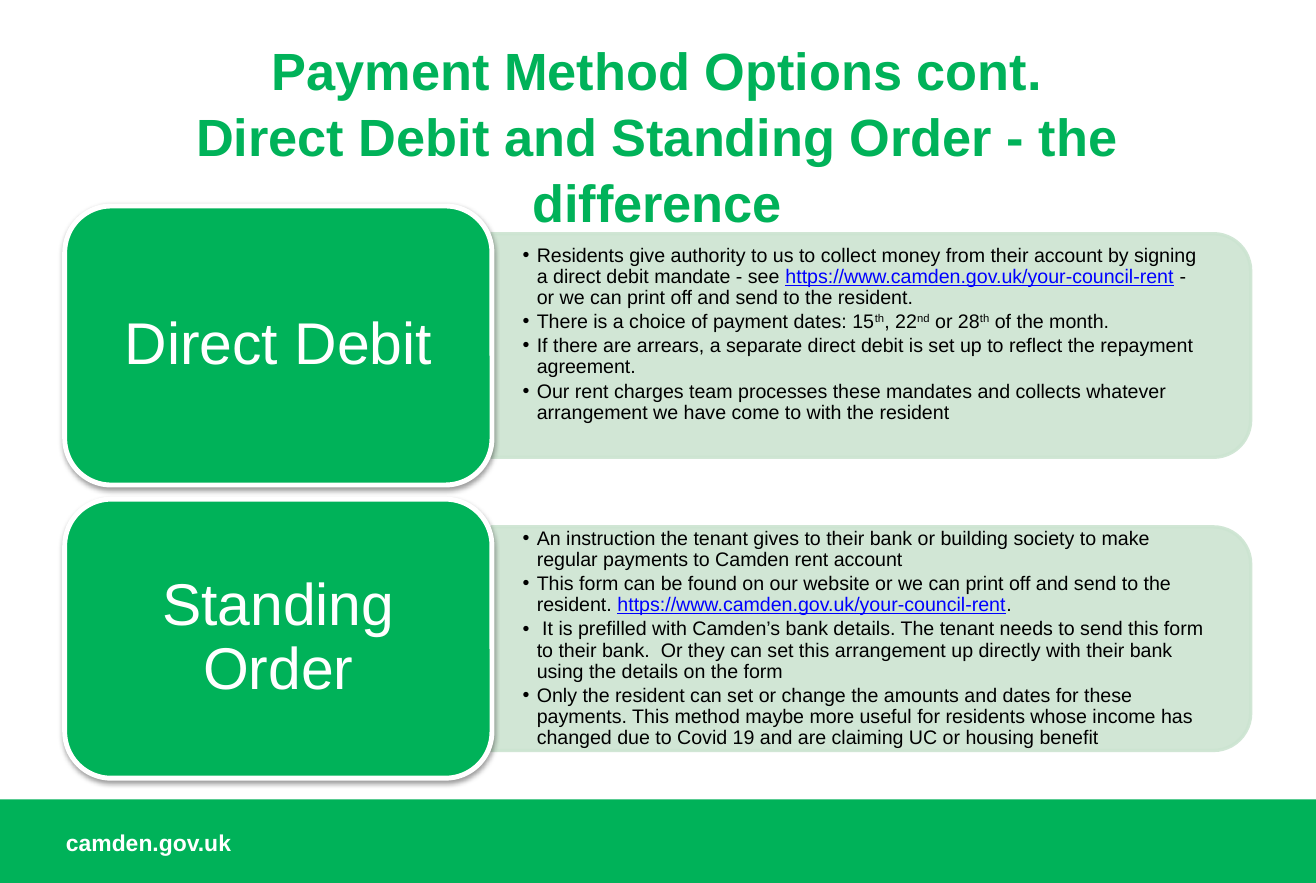
from lxml.etree import SubElement
from pptx import Presentation
from pptx.dml.color import RGBColor
from pptx.enum.shapes import MSO_SHAPE
from pptx.enum.text import MSO_ANCHOR, MSO_AUTO_SIZE, PP_ALIGN
from pptx.oxml.ns import qn
from pptx.util import Inches, Pt

GREEN, PALE, WHITE, BLACK, LINK = "00B259", "CCE4D1", "FFFFFF", "000000", "0000FF"
RENT_URL = ("https://www.camden.gov.uk/your-council-rent", "link")

# Each row: heading, bottom inset of its list, list items made of (text, style) parts
ROWS = [
    ("Direct Debit", 0.33, [
        [("Residents give authority to us to collect money from their account by "
          "signing a direct debit mandate - see ", ""), RENT_URL,
         (" - or we can print off and send to the resident.", "")],
        [("There is a choice of payment dates: 15", ""), ("th", "super"), (", 22", ""),
         ("nd", "super"), (" or 28", ""), ("th", "super"), (" of the month.", "")],
        [("If there are arrears, a separate direct debit is set up to reflect the "
          "repayment agreement.", "")],
        [("Our rent charges team processes these mandates and collects whatever "
          "arrangement we have come to with the resident", "")],
    ]),
    ("Standing Order", 0.14, [
        [("An instruction the tenant gives to their bank or building society to make "
          "regular payments to Camden rent account", "")],
        [("This form can be found on our website or we can print off and send to the "
          "resident. ", ""), RENT_URL, (".", "")],
        [(" It is prefilled with Camden’s bank details. The tenant needs to send this "
          "form to their bank.  Or they can set this arrangement up directly with their "
          "bank using the details on the form", "")],
        [("Only the resident can set or change the amounts and dates for these payments. "
          "This method maybe more useful for residents whose income has changed due to "
          "Covid 19 and are claiming UC or housing benefit", "")],
    ]),
]


def color(value):
    return RGBColor.from_string(value)


def format_frame(box, left, top, right, bottom, anchor):
    frame = box.text_frame
    frame.word_wrap = True
    frame.auto_size = MSO_AUTO_SIZE.NONE
    frame.vertical_anchor = anchor
    frame.margin_left, frame.margin_top = Inches(left), Inches(top)
    frame.margin_right, frame.margin_bottom = Inches(right), Inches(bottom)
    return frame


deck = Presentation()
deck.slide_width, deck.slide_height = Inches(11.18), Inches(7.5)
page = deck.slides.add_slide(deck.slide_layouts[3])
title, *lists = page.placeholders

# Footer band
band = page.shapes.add_shape(MSO_SHAPE.RECTANGLE, 0, Inches(6.79), deck.slide_width, Inches(0.71))
band.shadow.inherit = False
band.fill.solid()
band.fill.fore_color.rgb = color(GREEN)
band.line.fill.background()
footer = page.shapes.add_textbox(Inches(0.56), Inches(7.04), Inches(4.61), Inches(0.24))
para = format_frame(footer, 0, 0, 0.1, 0, MSO_ANCHOR.TOP).paragraphs[0]
para.text = "camden.gov.uk"
para.font.name, para.font.size, para.font.bold = "Arial", Pt(14), True
para.font.color.rgb = color(WHITE)

# Title
title.left, title.top, title.width, title.height = map(Inches, (0.56, 0.3, 10.05, 1.25))
para = format_frame(title, 0, 0, 0, 0, MSO_ANCHOR.TOP).paragraphs[0]
para.text = "Payment Method Options cont.\vDirect Debit and Standing Order - the difference"
para.alignment = PP_ALIGN.CENTER
para.line_spacing = 1.05
para.font.name, para.font.size, para.font.bold = "Arial", Pt(32), True
para.font.color.rgb = color(GREEN)

for index, (heading, bottom_inset, items) in enumerate(ROWS):
    row_top = 1.75 + 2.49 * index

    # Pale panel, turned so that its rounded end is on the right
    panel = page.shapes.add_shape(MSO_SHAPE.ROUND_2_SAME_RECTANGLE, Inches(6.45),
                                  Inches(row_top - 2.04), Inches(1.9), Inches(6.45))
    panel.rotation = 90
    panel.shadow.inherit = False
    panel.fill.solid()
    panel.fill.fore_color.rgb = color(PALE)
    panel.line.color.rgb = color(PALE)
    panel.line.width = Pt(2)
    for shade in panel._element.spPr.iter(qn("a:srgbClr")):
        SubElement(shade, qn("a:alpha"), val="90000")

    # Bulleted list, brought in front of its panel
    listing = lists[index]
    page.shapes._spTree.append(listing._element)
    listing.left, listing.top = Inches(4.17), Inches(row_top + 0.33)
    listing.width, listing.height = Inches(6.36), Inches(1.71)
    frame = format_frame(listing, 0.27, 0.14, 0.27, bottom_inset, MSO_ANCHOR.MIDDLE)
    for number, parts in enumerate(items):
        para = frame.add_paragraph() if number else frame.paragraphs[0]
        properties = para._p.get_or_add_pPr()
        properties.set("marL", str(Inches(0.12)))
        properties.set("indent", str(Inches(-0.12)))
        para.line_spacing = 0.9
        para.space_before, para.space_after = Pt(0), Pt(1.8)
        para.font.name, para.font.size = "Arial", Pt(12)
        para.font.color.rgb = color(BLACK)
        for text, style in parts:
            span = para.add_run()
            span.text = text
            if style == "link":
                span.font.underline = True
                span.font.color.rgb = color(LINK)
            elif style == "super":
                span._r.get_or_add_rPr().set("baseline", "30000")

    # Green heading card with a soft shadow
    card = page.shapes.add_shape(MSO_SHAPE.ROUNDED_RECTANGLE, Inches(0.55), Inches(row_top),
                                 Inches(3.63), Inches(2.37))
    card.fill.solid()
    card.fill.fore_color.rgb = color(GREEN)
    card.line.color.rgb = color(WHITE)
    card.line.width = Pt(3)
    card.shadow.inherit = False
    effects = card._element.spPr.find(qn("a:effectLst"))
    shadow = SubElement(effects, qn("a:outerShdw"), blurRad="40000", dist="20000",
                        dir="5400000", rotWithShape="0")
    SubElement(SubElement(shadow, qn("a:srgbClr"), val=BLACK), qn("a:alpha"), val="38000")
    para = format_frame(card, 0.26, 0.19, 0.26, 0.19, MSO_ANCHOR.MIDDLE).paragraphs[0]
    para.text = heading
    para.alignment = PP_ALIGN.CENTER
    para.line_spacing = 0.9
    para.font.name, para.font.size = "Arial", Pt(36)
    para.font.color.rgb = color(WHITE)

deck.save("out.pptx")
